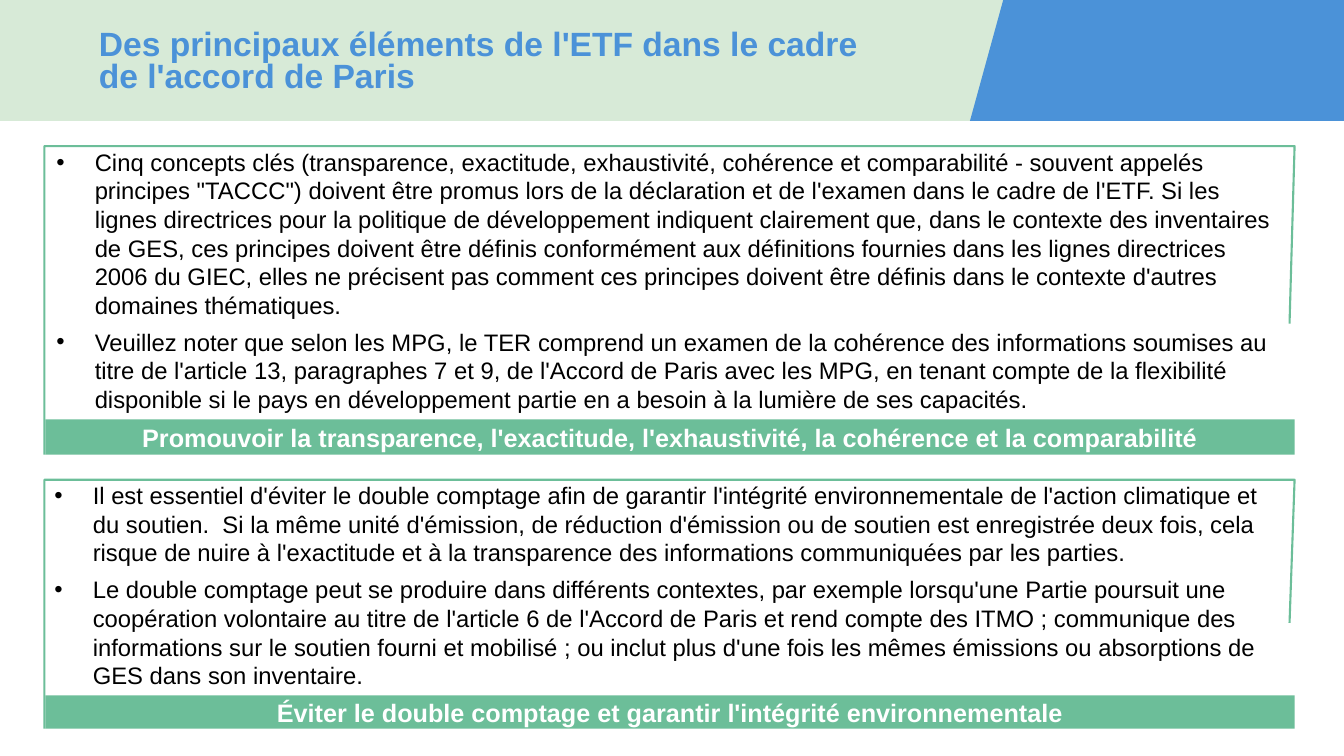
from lxml.etree import SubElement
from pptx import Presentation
from pptx.dml.color import RGBColor
from pptx.enum.shapes import MSO_SHAPE
from pptx.enum.text import MSO_ANCHOR, MSO_AUTO_SIZE, PP_ALIGN
from pptx.oxml.ns import qn
from pptx.util import Pt

PX = 9144  # 100 px to the inch
BLUE = RGBColor(0x4B, 0x92, 0xD8)
PALE_GREEN = RGBColor(0xD7, 0xEA, 0xD7)
GREEN = RGBColor(0x6C, 0xBE, 0x99)
BLACK = RGBColor(0, 0, 0)
WHITE = RGBColor(255, 255, 255)

deck = Presentation()
deck.slide_width, deck.slide_height = 1333 * PX, 750 * PX
page = deck.slides.add_slide(deck.slide_layouts[5])
shapes = page.shapes


def add_bar(left, top, width, height, color):
    bar = shapes.add_shape(MSO_SHAPE.RECTANGLE, left * PX, top * PX, width * PX, height * PX)
    bar.shadow.inherit = False
    bar.fill.solid()
    bar.fill.fore_color.rgb = color
    bar.line.fill.background()
    return bar


def add_span(para, text, size, color, bold=False):
    span = para.add_run()
    span.text = text
    span.font.name = "Arial"
    span.font.size = Pt(size)
    span.font.bold = bold
    span.font.color.rgb = color


# Header band with its slanted corner
add_bar(0, 0, 1333, 120, PALE_GREEN)
builder = shapes.build_freeform(1333, 120, scale=PX)
builder.add_line_segments([(962, 120), (995, 0), (1333, 0)], close=True)
corner = builder.convert_to_shape()
corner.shadow.inherit = False
corner.fill.solid()
corner.fill.fore_color.rgb = BLUE
corner.line.fill.background()

# Title, brought in front of the band
title = shapes.title
shapes.element.append(title.element)
title.left, title.top, title.width, title.height = 98 * PX, 27 * PX, 785 * PX, 71 * PX
frame = title.text_frame
frame.margin_left = frame.margin_top = frame.margin_right = frame.margin_bottom = 0
frame.word_wrap = True
frame.auto_size = MSO_AUTO_SIZE.NONE
frame.vertical_anchor = MSO_ANCHOR.MIDDLE
para = frame.paragraphs[0]
para.alignment = PP_ALIGN.LEFT
para.line_spacing = 0.8
add_span(para, "Des principaux éléments de l'ETF dans le cadre de l'accord de Paris", 24, BLUE, True)

# Each panel: text left, top, bar top, bottom, bracket end, bar label, bullets
panels = [
    (56, 145, 416, 451, 321,
     "Promouvoir la transparence, l'exactitude, l'exhaustivité, la cohérence et la comparabilité",
     ["Cinq concepts clés (transparence, exactitude, exhaustivité, cohérence et comparabilité - "
      "souvent appelés principes \"TACCC\") doivent être promus lors de la déclaration et de "
      "l'examen dans le cadre de l'ETF. Si les lignes directrices pour la politique de "
      "développement indiquent clairement que, dans le contexte des inventaires de GES, ces "
      "principes doivent être définis conformément aux définitions fournies dans les lignes "
      "directrices 2006 du GIEC, elles ne précisent pas comment ces principes doivent être "
      "définis dans le contexte d'autres domaines thématiques.",
      "Veuillez noter que selon les MPG, le TER comprend un examen de la cohérence des "
      "informations soumises au titre de l'article 13, paragraphes 7 et 9, de l'Accord de Paris "
      "avec les MPG, en tenant compte de la flexibilité disponible si le pays en développement "
      "partie en a besoin à la lumière de ses capacités."]),
    (54, 476, 690, 723, 618,
     "Éviter le double comptage et garantir l'intégrité environnementale",
     ["Il est essentiel d'éviter le double comptage afin de garantir l'intégrité "
      "environnementale de l'action climatique et du soutien.  Si la même unité d'émission, de "
      "réduction d'émission ou de soutien est enregistrée deux fois, cela risque de nuire à "
      "l'exactitude et à la transparence des informations communiquées par les parties.",
      "Le double comptage peut se produire dans différents contextes, par exemple lorsqu'une "
      "Partie poursuit une coopération volontaire au titre de l'article 6 de l'Accord de Paris "
      "et rend compte des ITMO ; communique des informations sur le soutien fourni et mobilisé ; "
      "ou inclut plus d'une fois les mêmes émissions ou absorptions de GES dans son inventaire."]),
]

for text_left, top, bar_top, bottom, bracket_end, label, bullets in panels:
    # Bulleted text
    box = shapes.add_textbox(text_left * PX, top * PX, 1218 * PX, (bar_top - top) * PX)
    frame = box.text_frame
    frame.word_wrap = True
    frame.vertical_anchor = MSO_ANCHOR.MIDDLE
    frame.margin_left = frame.margin_top = 0
    frame.margin_right, frame.margin_bottom = 10 * PX, 5 * PX
    for index, text in enumerate(bullets):
        para = frame.paragraphs[0] if index == 0 else frame.add_paragraph()
        properties = para._p.get_or_add_pPr()
        properties.set("marL", str(38 * PX))
        properties.set("indent", str(-38 * PX))
        SubElement(properties, qn("a:buFont"), typeface="Arial")
        SubElement(properties, qn("a:buChar"), char="•")
        para.space_before = Pt(6 if index else 0)
        add_span(para, text, 17, BLACK)

    # Open bracket around the text
    builder = shapes.build_freeform(44, bottom, scale=PX)
    builder.add_line_segments([(44, top), (1284, top), (1279, bracket_end)], close=False)
    bracket = builder.convert_to_shape()
    bracket.shadow.inherit = False
    bracket.fill.background()
    bracket.line.color.rgb = GREEN
    bracket.line.width = Pt(1.5)

    # Label bar
    bar = add_bar(45, bar_top, 1239, bottom - bar_top, GREEN)
    bar.text_frame.word_wrap = True
    bar.text_frame.vertical_anchor = MSO_ANCHOR.MIDDLE
    para = bar.text_frame.paragraphs[0]
    para.alignment = PP_ALIGN.CENTER
    add_span(para, label, 18, WHITE, True)

deck.save("out.pptx")
